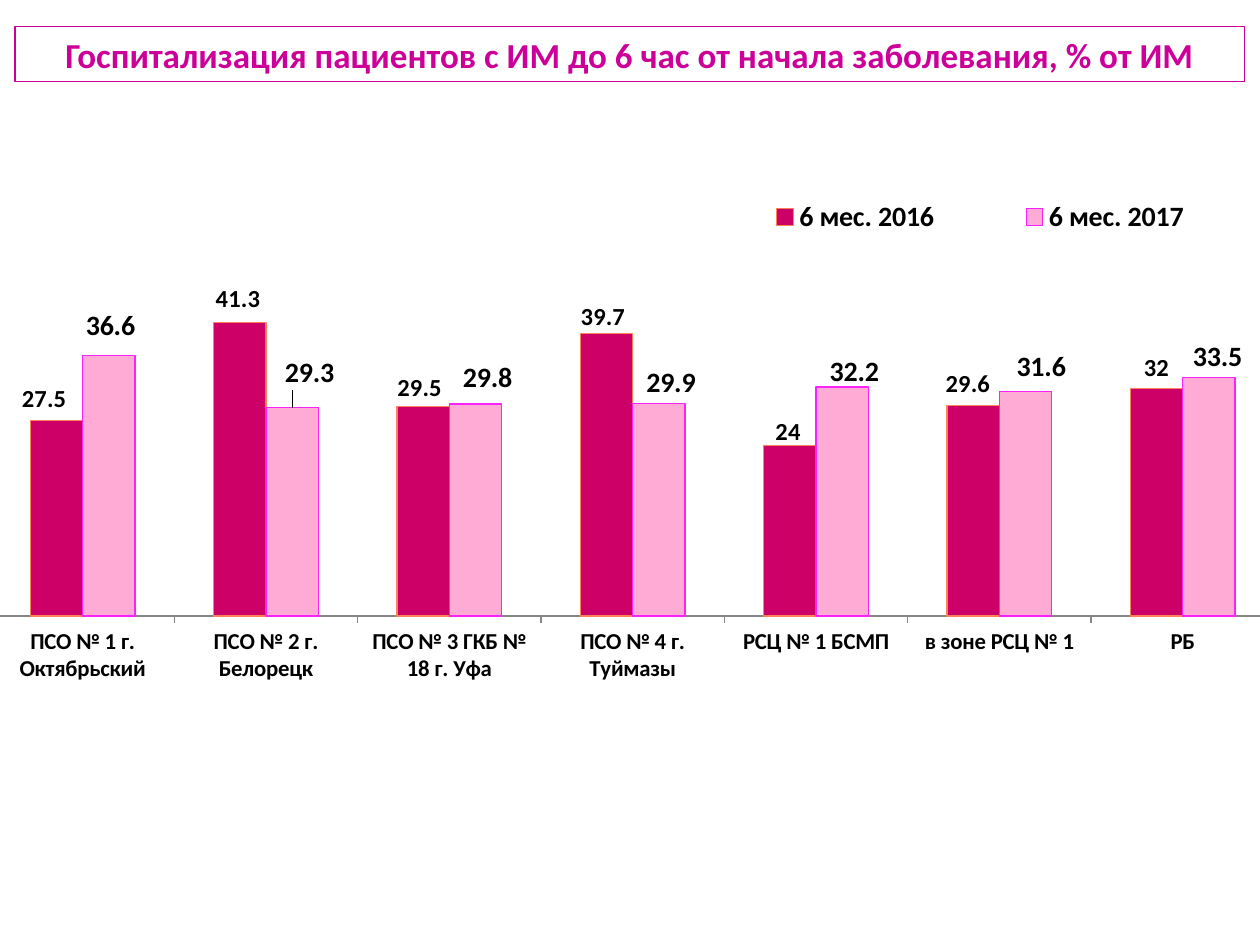
from lxml import etree
from pptx import Presentation
from pptx import util as u
from pptx.chart import data as chart_data
from pptx.dml import color
from pptx.enum import chart as c
from pptx.enum import shapes, text
from pptx.oxml import ns

MAGENTA = color.RGBColor(0xCC, 0x00, 0x99)
CRIMSON = color.RGBColor(0xCC, 0x00, 0x66)
CORAL = color.RGBColor(0xFF, 0x82, 0x5B)
PINK = color.RGBColor(0xFF, 0xAB, 0xD5)
VIOLET = color.RGBColor(0xF9, 0x23, 0xF9)
GRAY = color.RGBColor(0x86, 0x86, 0x86)
BLACK = color.RGBColor(0, 0, 0)
WHITE = color.RGBColor(0xFF, 0xFF, 0xFF)
FONT = "Calibri"

TITLE = "Госпитализация пациентов с ИМ до 6 час от начала заболевания, % от ИМ"
CATEGORIES = [
    "ПСО № 1 г. Октябрьский", "ПСО № 2 г. Белорецк", "ПСО № 3 ГКБ № 18 г. Уфа",
    "ПСО № 4 г. Туймазы", "РСЦ № 1 БСМП", "в зоне РСЦ № 1", "РБ",
]
SERIES = [
    ("6 мес. 2016", [27.5, 41.3, 29.5, 39.7, 24, 29.6, 32], CRIMSON, CORAL, 14,
     [(-7, -1), (-1, -2), (-2, 1), (-2, 2), (-1, 4), (-3, -1), (0, 0)]),
    ("6 мес. 2017", [36.6, 29.3, 29.8, 29.9, 32.2, 31.6, 33.5], PINK, VIOLET, 16,
     [(1, -4), (10, -7), (7, -2), (7, 1), (7, 4), (9, -1), (5, 1)]),
]
CHART_WIDTH, CHART_HEIGHT = 759.6, 351.4


def set_font(font, size, tint=BLACK):
    font.name = FONT
    font.size = u.Pt(size)
    font.bold = True
    font.color.rgb = tint


def set_layout(parent, index, **values):
    for old in parent.findall(ns.qn("c:layout")):
        parent.remove(old)
    layout = etree.Element(ns.qn("c:layout"))
    manual = etree.SubElement(layout, ns.qn("c:manualLayout"))
    for name, value in values.items():
        etree.SubElement(manual, ns.qn(f"c:{name}")).set("val", str(value))
    parent.insert(index, layout)


def add_title(page):
    box = page.shapes.add_shape(
        shapes.MSO_SHAPE.RECTANGLE, u.Pt(8.6), u.Pt(15.1), u.Pt(702.7), u.Pt(31.7))
    box.shadow.inherit = False
    box.fill.solid()
    box.fill.fore_color.rgb = WHITE
    box.line.color.rgb = MAGENTA
    box.line.width = u.Pt(0.75)
    frame = box.text_frame
    frame.word_wrap = True
    frame.auto_size = text.MSO_AUTO_SIZE.SHAPE_TO_FIT_TEXT
    para = frame.paragraphs[0]
    para.text = TITLE
    para.alignment = text.PP_ALIGN.CENTER
    set_font(para.font, 20, MAGENTA)


def style_series(series, fill, outline, size, offsets):
    series.format.fill.solid()
    series.format.fill.fore_color.rgb = fill
    series.format.line.color.rgb = outline
    series.format.line.width = u.Pt(0.75)
    labels = series.data_labels
    labels.show_value = True
    labels.position = c.XL_LABEL_POSITION.OUTSIDE_END
    set_font(labels.font, size)
    for index in range(len(offsets)):
        label = series.points[index].data_label
        set_font(label.font, size)
        label.position = c.XL_LABEL_POSITION.OUTSIDE_END
    nodes = series._element.iter(ns.qn("c:dLbl"))
    for node, (right, down) in zip(nodes, offsets):
        set_layout(node, 1, x=round(right / CHART_WIDTH, 4),
                   y=round(down / CHART_HEIGHT, 4))


def style_axes(chart):
    categories = chart.category_axis
    categories.major_tick_mark = c.XL_TICK_MARK.OUTSIDE
    categories.format.line.color.rgb = GRAY
    set_font(categories.tick_labels.font, 13)
    values = chart.value_axis
    values.minimum_scale, values.maximum_scale, values.major_unit = 0, 60, 100
    values.has_major_gridlines = False
    values.major_tick_mark = c.XL_TICK_MARK.NONE
    values.tick_label_position = c.XL_TICK_LABEL_POSITION.NONE
    values.format.line.fill.background()


def add_legend(chart):
    chart.has_legend = True
    legend = chart.legend
    legend.position = c.XL_LEGEND_POSITION.TOP
    legend.include_in_layout = False
    set_font(legend.font, 16)
    set_layout(legend._element, 1, xMode="edge", yMode="edge",
               x=0.563, y=0.018, w=0.431, h=0.1)


def add_column_chart(page):
    data = chart_data.CategoryChartData()
    data.categories = CATEGORIES
    for name, values, *_ in SERIES:
        data.add_series(name, values)
    chart = page.shapes.add_chart(
        c.XL_CHART_TYPE.COLUMN_CLUSTERED, u.Pt(-31), u.Pt(100.1),
        u.Pt(CHART_WIDTH), u.Pt(CHART_HEIGHT), data).chart
    chart.has_title = False
    chart.font.name = FONT
    chart.font.size = u.Pt(18)
    chart.font.color.rgb = BLACK
    plot = chart.plots[0]
    plot.vary_by_categories = False
    plot.gap_width = 150
    plot.overlap = 0
    for series, (_, _, *style) in zip(plot.series, SERIES):
        style_series(series, *style)
    style_axes(chart)
    add_legend(chart)
    area = chart._chartSpace.find(".//" + ns.qn("c:plotArea"))
    set_layout(area, 0, layoutTarget="inner", xMode="edge", yMode="edge",
               x=0.034, y=0.023, w=0.966, h=0.694)


def main():
    deck = Presentation()
    deck.slide_width, deck.slide_height = u.Pt(720), u.Pt(540)
    page = deck.slides.add_slide(deck.slide_layouts[6])
    add_title(page)
    add_column_chart(page)
    deck.save("out.pptx")


if __name__ == "__main__":
    main()
